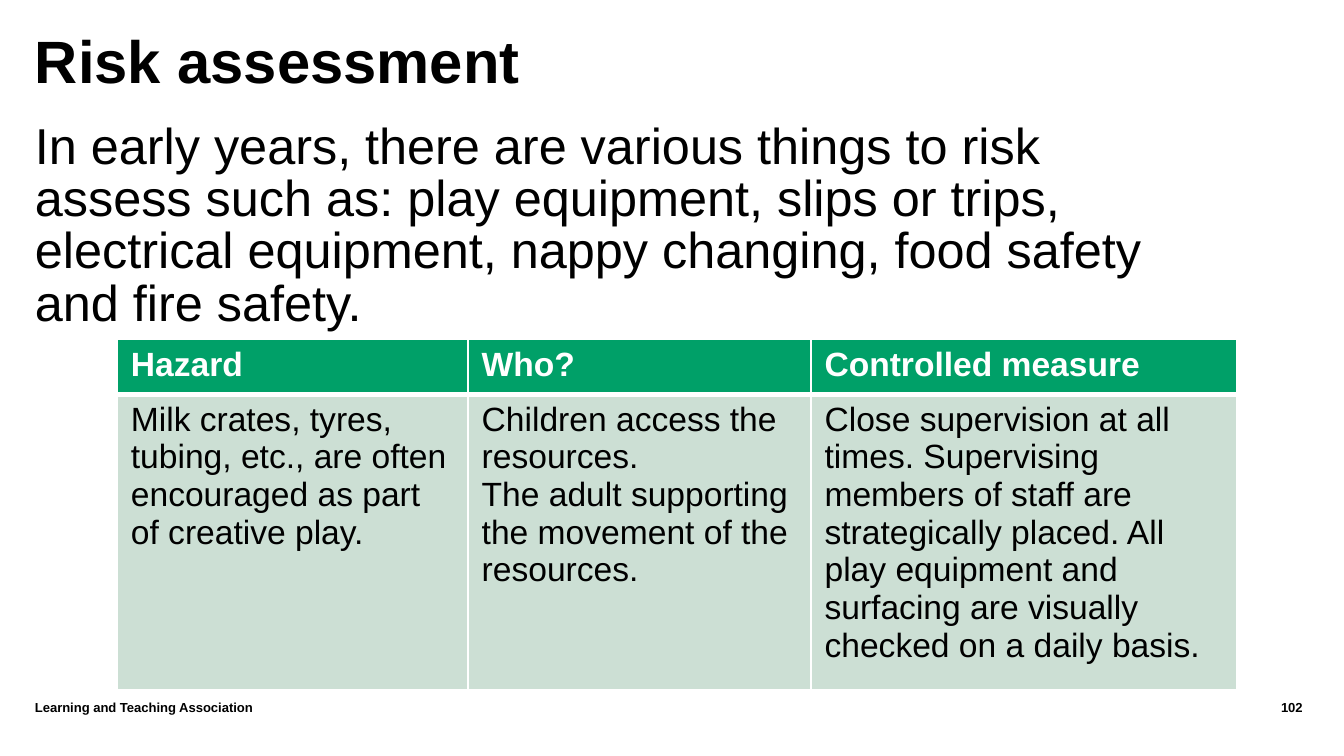
from lxml.etree import SubElement
from pptx import Presentation
from pptx.dml.color import RGBColor
from pptx.enum.text import MSO_ANCHOR, PP_ALIGN
from pptx.oxml.ns import qn
from pptx.util import Cm, Pt

FONT = "Arial"
BLACK = "000000"
WHITE = "FFFFFF"
GREEN = "00A068"
PALE_GREEN = "CCDFD4"
MARGIN = 0.66

COLUMN_WIDTHS = [6.63, 6.48, 8.05]
ROW_HEIGHTS = [1.04, 5.2]
RISKS = [
    ["Hazard", "Who?", "Controlled measure"],
    [
        "Milk crates, tyres, tubing, etc., are often encouraged as part of creative play.",
        "Children access the resources.\nThe adult supporting the movement of the resources.",
        "Close supervision at all times. Supervising members of staff are strategically placed. "
        "All play equipment and surfacing are visually checked on a daily basis.",
    ],
]


def color(value):
    return RGBColor.from_string(value)


def format_text(text_frame, size, text_color=BLACK, bold=False, align=PP_ALIGN.LEFT, spacing=None):
    for paragraph in text_frame.paragraphs:
        paragraph.alignment = align
        if spacing:
            paragraph.line_spacing = Pt(spacing)
        for run in paragraph.runs:
            run.font.name = FONT
            run.font.size = Pt(size)
            run.font.bold = bold
            run.font.color.rgb = color(text_color)


def add_text(slide, box, text, size, **style):
    shape = slide.shapes.add_textbox(*[Cm(length) for length in box])
    text_frame = shape.text_frame
    text_frame.word_wrap = True
    text_frame.vertical_anchor = MSO_ANCHOR.TOP
    text_frame.margin_left = text_frame.margin_right = 0
    text_frame.margin_top = text_frame.margin_bottom = 0
    text_frame.text = text
    format_text(text_frame, size, **style)


def add_border(cell, side, width):
    properties = cell._tc.get_or_add_tcPr()
    line = SubElement(properties, qn(f"a:ln{side}"), w=str(Pt(width)))
    fill = SubElement(line, qn("a:solidFill"))
    SubElement(fill, qn("a:srgbClr"), val=WHITE)


def add_heading(slide, box):
    left, top, width, height = box
    add_text(slide, (left, top, width, 1.93), "Risk assessment", 32, bold=True, spacing=20)
    add_text(
        slide,
        (left, top + 1.22, 21.31, height - 1.22),
        "In early years, there are various things to risk assess such as: play equipment, "
        "slips or trips, electrical equipment, nappy changing, food safety and fire safety.",
        27,
        spacing=28,
    )


def add_risk_table(slide, box):
    lengths = [Cm(length) for length in box]
    table = slide.shapes.add_table(len(RISKS), len(COLUMN_WIDTHS), *lengths).table
    for column, width in zip(table.columns, COLUMN_WIDTHS):
        column.width = Cm(width)
    for row_index, (row, height) in enumerate(zip(table.rows, ROW_HEIGHTS)):
        row.height = Cm(height)
        header = row_index == 0
        for cell, text in zip(row.cells, RISKS[row_index]):
            cell.text_frame.text = text
            format_text(cell.text_frame, 18, WHITE if header else BLACK, bold=header)
            for side in "LRTB":
                divider = side == ("B" if header else "T")
                add_border(cell, side, 3 if divider else 1)
            cell.fill.solid()
            cell.fill.fore_color.rgb = color(GREEN if header else PALE_GREEN)


def add_footer(slide, box):
    left, top, width, height = box
    number_width = 2.51
    add_text(slide, (left, top, 21.36, height), "Learning and Teaching Association", 7, bold=True)
    add_text(
        slide,
        (left + width - number_width, top, number_width, height),
        "102",
        7,
        bold=True,
        align=PP_ALIGN.RIGHT,
    )


def main():
    presentation = Presentation()
    presentation.slide_width = Cm(25.4)
    presentation.slide_height = Cm(14.29)
    slide = presentation.slides.add_slide(presentation.slide_layouts[6])
    add_heading(slide, (MARGIN, 1.09, 23.44, 5.31))
    add_risk_table(slide, (2.22, 6.41, sum(COLUMN_WIDTHS), sum(ROW_HEIGHTS)))
    add_footer(slide, (MARGIN, 13.23, 23.96, 0.76))
    presentation.save("out.pptx")


if __name__ == "__main__":
    main()
